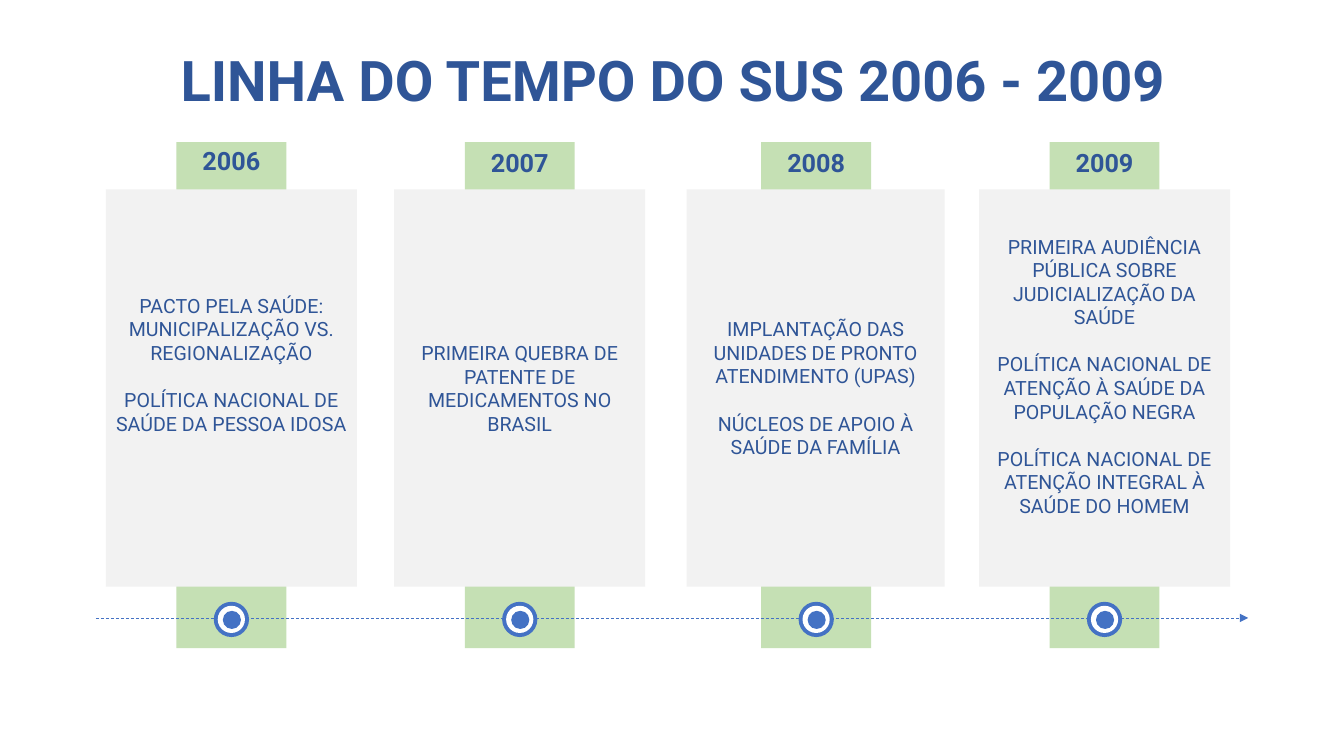
from dataclasses import dataclass

from lxml import etree
from pptx import Presentation
from pptx.dml.color import RGBColor
from pptx.enum.dml import MSO_LINE
from pptx.enum.shapes import MSO_CONNECTOR, MSO_SHAPE
from pptx.enum.text import MSO_ANCHOR, MSO_AUTO_SIZE, PP_ALIGN
from pptx.oxml.ns import qn
from pptx.shapes.autoshape import Shape
from pptx.slide import Slide
from pptx.text.text import TextFrame
from pptx.util import Emu, Pt

RECTANGLE, OVAL = MSO_SHAPE.RECTANGLE, MSO_SHAPE.OVAL
TOP, MIDDLE = MSO_ANCHOR.TOP, MSO_ANCHOR.MIDDLE
CENTER = PP_ALIGN.CENTER
NO_FIT, GROW = MSO_AUTO_SIZE.NONE, MSO_AUTO_SIZE.SHAPE_TO_FIT_TEXT
PX = 9144  # 100 px to the inch


@dataclass(frozen=True)
class Theme:
    font: str = "Roboto"
    text: RGBColor = RGBColor(0x2F, 0x55, 0x97)
    accent: RGBColor = RGBColor(0x44, 0x72, 0xC4)
    stripe: RGBColor = RGBColor(0xC5, 0xE0, 0xB4)
    card: RGBColor = RGBColor(0xF2, 0xF2, 0xF2)
    white: RGBColor = RGBColor(0xFF, 0xFF, 0xFF)
    title_size: int = 40
    year_size: int = 18
    body_size: int = 14
    paragraph_gap: int = 17


@dataclass(frozen=True)
class Box:
    left: int
    top: int
    width: int
    height: int

    def emu(self) -> tuple[Emu, Emu, Emu, Emu]:
        return (Emu(self.left * PX), Emu(self.top * PX),
                Emu(self.width * PX), Emu(self.height * PX))


@dataclass(frozen=True)
class Milestone:
    year: str
    left: int
    events: tuple[str, ...]
    year_top: int = 141
    card_width: int = 249
    bottom_inset: int = 5


THEME = Theme()
TITLE = "LINHA DO TEMPO DO SUS 2006 - 2009"
STRIPE_WIDTH = 109
RINGS = ((35, THEME.accent), (27, THEME.white), (18, THEME.accent))
RING_TOP = 597
AXIS_LEFT, AXIS_RIGHT, AXIS_Y = 95, 1238, 613
MILESTONES = (
    Milestone("2006", 175, (
        "PACTO PELA SAÚDE: MUNICIPALIZAÇÃO VS. REGIONALIZAÇÃO",
        "POLÍTICA NACIONAL DE SAÚDE DA PESSOA IDOSA",
    ), year_top=139, bottom_inset=52),
    Milestone("2007", 461, (
        "PRIMEIRA QUEBRA DE PATENTE DE MEDICAMENTOS NO BRASIL",
    )),
    Milestone("2008", 755, (
        "IMPLANTAÇÃO DAS UNIDADES DE PRONTO ATENDIMENTO (UPAS)",
        "NÚCLEOS DE APOIO À SAÚDE DA FAMÍLIA",
    ), card_width=256),
    Milestone("2009", 1041, (
        "PRIMEIRA AUDIÊNCIA PÚBLICA SOBRE JUDICIALIZAÇÃO DA SAÚDE",
        "POLÍTICA NACIONAL DE ATENÇÃO À SAÚDE DA POPULAÇÃO NEGRA",
        "POLÍTICA NACIONAL DE ATENÇÃO INTEGRAL À SAÚDE DO HOMEM",
    ), bottom_inset=29),
)


def write_text(frame: TextFrame, lines: tuple[str, ...], size: int,
               bold: bool = False, **frame_format: object) -> None:
    """Fill a frame with centred paragraphs, set apart by the theme's gap."""
    for name, value in {"word_wrap": True, **frame_format}.items():
        setattr(frame, name, value)
    font_format = {"name": THEME.font, "size": Pt(size), "bold": bold}
    for index, line in enumerate(lines):
        paragraph = frame.add_paragraph() if index else frame.paragraphs[0]
        paragraph.alignment = CENTER
        paragraph.space_before = Pt(THEME.paragraph_gap if index else 0)
        run = paragraph.add_run()
        run.text = line
        for name, value in font_format.items():
            setattr(run.font, name, value)
        run.font.color.rgb = THEME.text


def add_block(slide: Slide, kind: MSO_SHAPE, box: Box, color: RGBColor) -> Shape:
    shape = slide.shapes.add_shape(kind, *box.emu())
    shape.shadow.inherit = False
    shape.fill.solid()
    shape.fill.fore_color.rgb = color
    shape.line.fill.background()
    return shape


def add_title(slide: Slide) -> None:
    title = slide.shapes.title
    title.left, title.top, title.width, title.height = Box(92, 40, 1150, 86).emu()
    write_text(title.text_frame, (TITLE,), THEME.title_size, bold=True,
               vertical_anchor=MIDDLE, auto_size=NO_FIT)
    title.text_frame.paragraphs[0].line_spacing = 0.9


def add_card(slide: Slide, milestone: Milestone) -> None:
    left = milestone.left + (STRIPE_WIDTH - milestone.card_width) // 2
    card = add_block(slide, RECTANGLE, Box(left, 188, milestone.card_width, 394),
                     THEME.card)
    write_text(card.text_frame, milestone.events, THEME.body_size,
               vertical_anchor=MIDDLE, margin_left=Emu(8 * PX),
               margin_right=Emu(8 * PX),
               margin_bottom=Emu(milestone.bottom_inset * PX))


def add_year(slide: Slide, milestone: Milestone) -> None:
    box = Box(milestone.left, milestone.year_top, STRIPE_WIDTH, 40)
    label = slide.shapes.add_textbox(*box.emu())
    write_text(label.text_frame, (milestone.year,), THEME.year_size, bold=True,
               vertical_anchor=TOP, auto_size=GROW)


def add_axis(slide: Slide) -> None:
    axis = slide.shapes.add_connector(
        MSO_CONNECTOR.STRAIGHT, Emu(AXIS_LEFT * PX), Emu(AXIS_Y * PX),
        Emu(AXIS_RIGHT * PX), Emu(AXIS_Y * PX))
    axis.line.color.rgb = THEME.accent
    axis.line.width = Pt(0.5)
    axis.line.dash_style = MSO_LINE.DASH
    properties = axis.element.spPr
    etree.SubElement(properties.find(qn("a:ln")), qn("a:tailEnd"), type="triangle")
    etree.SubElement(properties, qn("a:effectLst"))


def add_marker(slide: Slide, milestone: Milestone) -> None:
    """Stack the concentric rings that mark a year on the axis."""
    outer = RINGS[0][0]
    left = milestone.left + (STRIPE_WIDTH - outer) // 2
    for size, color in RINGS:
        inset = (outer - size + 1) // 2
        add_block(slide, OVAL, Box(left + inset, RING_TOP + inset, size, size), color)


def main() -> None:
    presentation = Presentation()
    presentation.slide_width, presentation.slide_height = Emu(1333 * PX), Emu(750 * PX)
    slide = presentation.slides.add_slide(presentation.slide_layouts[5])
    add_title(slide)
    for milestone in MILESTONES:
        add_block(slide, RECTANGLE, Box(milestone.left, 141, STRIPE_WIDTH, 502),
                  THEME.stripe)
        add_card(slide, milestone)
        add_year(slide, milestone)
    add_axis(slide)
    for milestone in MILESTONES:
        add_marker(slide, milestone)
    presentation.save("out.pptx")


if __name__ == "__main__":
    main()
